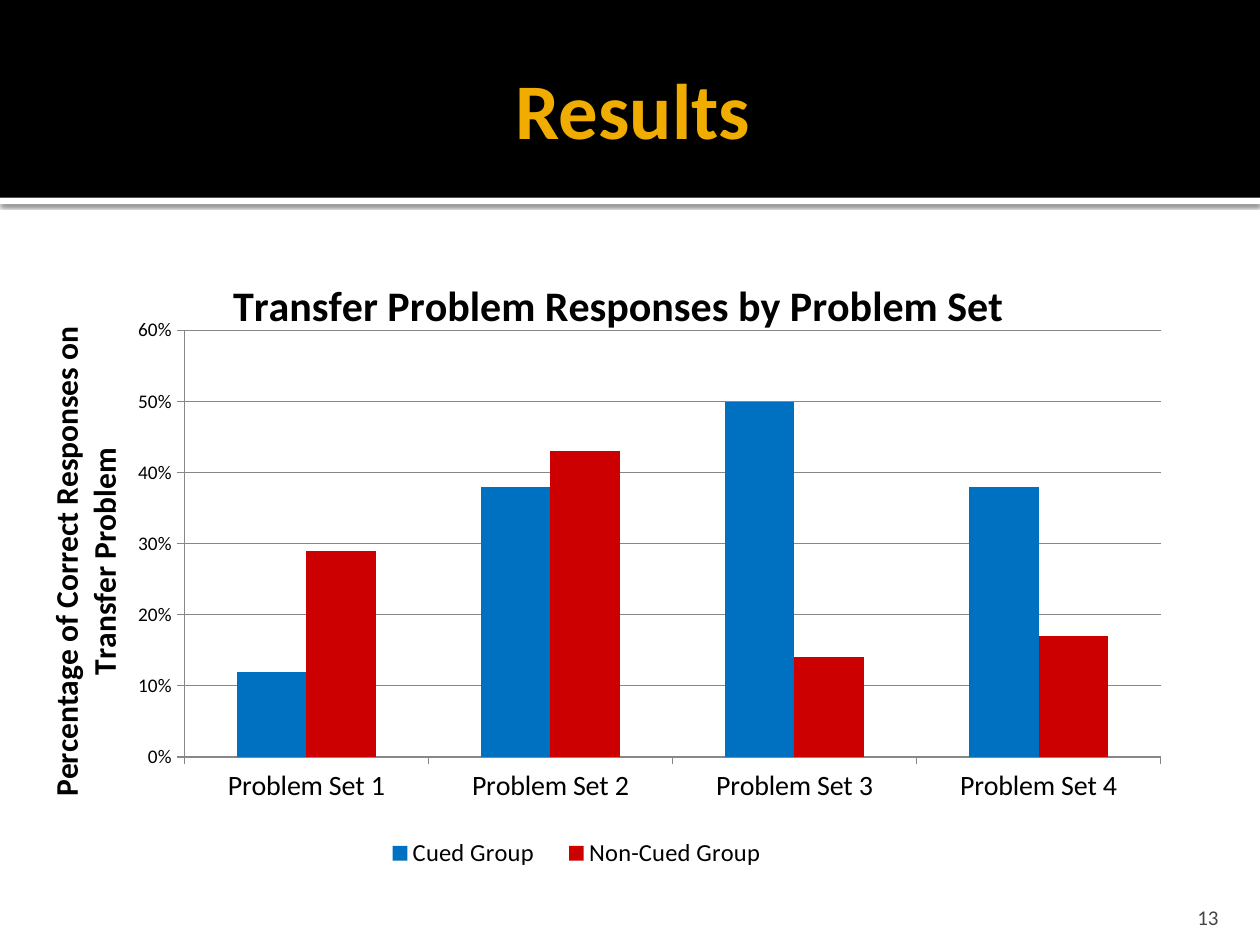
from dataclasses import dataclass
from typing import NamedTuple

from lxml.etree import SubElement as Sub
from pptx import Presentation
from pptx.chart.data import CategoryChartData as Data
from pptx.dml.color import RGBColor as Rgb
from pptx.enum.chart import XL_CHART_TYPE as Kind
from pptx.enum.chart import XL_LEGEND_POSITION as Side
from pptx.enum.chart import XL_TICK_MARK as Tick
from pptx.enum.shapes import MSO_SHAPE as Form
from pptx.enum.text import MSO_ANCHOR as Anchor
from pptx.enum.text import PP_ALIGN as Align
from pptx.oxml import parse_xml
from pptx.oxml.ns import qn
from pptx.util import Emu, Pt

PX = 9144


@dataclass(frozen=True)
class Theme:
    face: str = "Calibri"
    black: str = "000000"
    white: str = "FFFFFF"
    gold: str = "F0AD00"
    gray: str = "454545"
    rule: str = "878787"
    blue: str = "0070C0"
    red: str = "CC0000"
    head: int = 45
    title: int = 24
    axis: int = 18
    cat: int = 16
    key: int = 14
    num: int = 12
    val: int = 11
    base: int = 10


LOOK = Theme()


class Box(NamedTuple):
    left: int
    top: int
    width: int
    height: int

    def emu(self) -> list:
        return [Emu(n * PX) for n in self]


class Band(NamedTuple):
    box: Box
    fill: str
    shade: bool


class Label(NamedTuple):
    text: str
    box: Box
    size: int
    color: str
    bold: bool
    align: Align
    anchor: Anchor
    pads: tuple


class Group(NamedTuple):
    name: str
    vals: tuple
    color: str


BANDS = (
    Band(Box(0, 157, 1000, 5), LOOK.white, True),
    Band(Box(0, 0, 1000, 157), LOOK.black, False),
)
LABELS = (
    Label("Results", Box(50, 17, 900, 137), LOOK.head, LOOK.gold, True,
          Align.CENTER, Anchor.MIDDLE, (10, 5, 5, 5)),
    Label("13", Box(897, 708, 80, 30), LOOK.num, LOOK.gray, False,
          Align.RIGHT, Anchor.BOTTOM, (10, 5, 10, 0)),
)
GROUPS = (
    Group("Cued Group", (0.12, 0.38, 0.5, 0.38), LOOK.blue),
    Group("Non-Cued Group", (0.29, 0.43, 0.14, 0.17), LOOK.red),
)
SHADE = (
    '<a:effectLst xmlns:a="http://schemas.openxmlformats.org/drawingml/2006/main">'
    '<a:outerShdw blurRad="31750" dist="10160" dir="5400000">'
    '<a:srgbClr val="000000"><a:alpha val="60000"/></a:srgbClr>'
    '</a:outerShdw></a:effectLst>'
)


def style(font, size: int, color: str = LOOK.black, bold: bool = False) -> None:
    font.name = LOOK.face
    font.size = Pt(size)
    font.bold = bold
    font.color.rgb = Rgb.from_string(color)


def paint(fmt, color: str) -> None:
    fmt.fill.solid()
    fmt.fill.fore_color.rgb = Rgb.from_string(color)


def add_band(slide, band: Band) -> None:
    shape = slide.shapes.add_shape(Form.RECTANGLE, *band.box.emu())
    paint(shape, band.fill)
    shape.line.fill.background()
    if band.shade:
        shape.element.spPr.append(parse_xml(SHADE))
    else:
        shape.shadow.inherit = False


def add_label(slide, label: Label) -> None:
    frame = slide.shapes.add_textbox(*label.box.emu()).text_frame
    frame.word_wrap = True
    frame.vertical_anchor = label.anchor
    pads = [Emu(n * PX) for n in label.pads]
    frame.margin_left, frame.margin_top, frame.margin_right, frame.margin_bottom = pads
    para = frame.paragraphs[0]
    para.text = label.text
    para.alignment = label.align
    style(para.font, label.size, label.color, label.bold)


def set_title(owner, text: str, size: int) -> None:
    para = owner.text_frame.paragraphs[0]
    para.text = text
    style(para.font, size, bold=True)


def place(chart, route: str, index: int, **marks) -> None:
    node = chart.element.xpath(route)[0]
    for old in node.findall(qn("c:layout")):
        node.remove(old)
    lay = node.makeelement(qn("c:layout"))
    node.insert(index, lay)
    hand = Sub(lay, qn("c:manualLayout"))
    for tag, val in marks.items():
        Sub(hand, qn(f"c:{tag}")).set("val", str(val))


def add_graph(slide, box: Box) -> None:
    data = Data(number_format="0%")
    data.categories = [f"Problem Set {n}" for n in range(1, 5)]
    for group in GROUPS:
        data.add_series(group.name, group.vals)
    chart = slide.shapes.add_chart(Kind.COLUMN_CLUSTERED, *box.emu(), data).chart
    style(chart.font, LOOK.base)
    set_title(chart.chart_title, "Transfer Problem Responses by Problem Set", LOOK.title)

    plot = chart.plots[0]
    plot.gap_width, plot.overlap, plot.vary_by_categories = 150, 0, False
    for bar, group in zip(plot.series, GROUPS):
        paint(bar.format, group.color)
        bar.invert_if_negative = False

    cat, val = chart.category_axis, chart.value_axis
    for axis, size in ((cat, LOOK.cat), (val, LOOK.val)):
        style(axis.tick_labels.font, size)
        axis.major_tick_mark = Tick.OUTSIDE
        axis.format.line.color.rgb = Rgb.from_string(LOOK.rule)
    val.minimum_scale, val.maximum_scale, val.major_unit = 0, 0.6, 0.1
    val.tick_labels.number_format = "0%"
    val.tick_labels.number_format_is_linked = False
    val.major_gridlines.format.line.color.rgb = Rgb.from_string(LOOK.rule)
    set_title(val.axis_title, "Percentage of Correct Responses on Transfer Problem", LOOK.axis)

    chart.has_legend = True
    chart.legend.position = Side.BOTTOM
    chart.legend.include_in_layout = False
    style(chart.legend.font, LOOK.key)

    edge = dict(xMode="edge", yMode="edge")
    place(chart, "c:chart/c:plotArea", 0, layoutTarget="inner", **edge,
          x=0.135, y=0.135, w=0.834, h=0.669)
    place(chart, "c:chart/c:title", 1, **edge, x=0.17, y=0.04)
    place(chart, "c:chart/c:plotArea/c:valAx/c:title", 1, **edge, x=0.01, y=0.12)
    place(chart, "c:chart/c:legend", 1, **edge, x=0.29, y=0.92, w=0.36, h=0.07)


def main() -> None:
    deck = Presentation()
    deck.slide_width, deck.slide_height = Emu(1000 * PX), Emu(750 * PX)
    slide = deck.slides.add_slide(deck.slide_layouts[6])
    for band in BANDS:
        add_band(slide, band)
    add_graph(slide, Box(21, 194, 929, 506))
    for label in LABELS:
        add_label(slide, label)
    deck.save("out.pptx")


if __name__ == "__main__":
    main()
